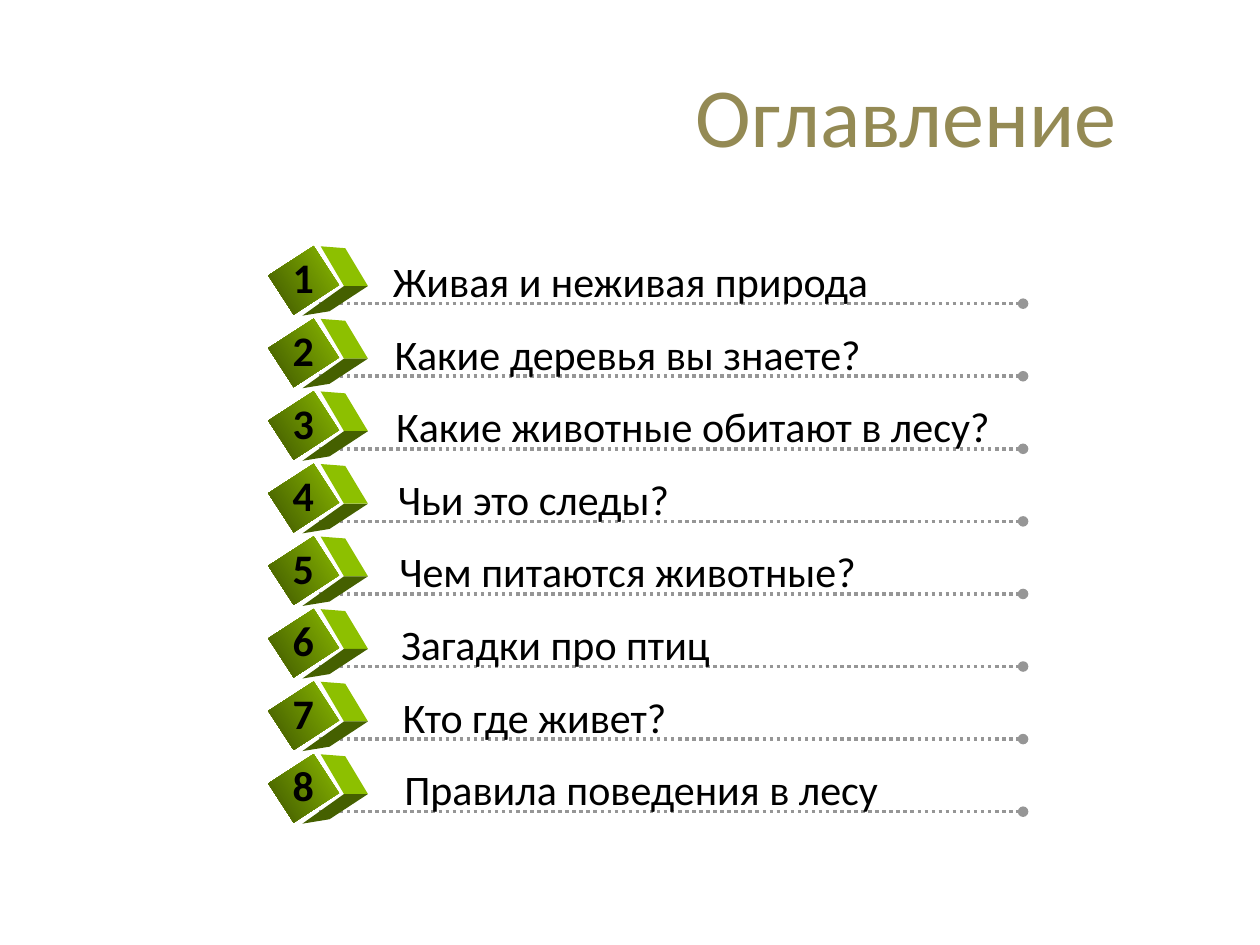
import pptx
import pptx.dml.color
import pptx.enum.dml
import pptx.enum.shapes
import pptx.enum.text
import pptx.oxml
import pptx.oxml.ns
import pptx.util

COLUMNS, ROWS = 100, 75
TOPICS = [
    "Живая и неживая природа",
    "Какие деревья вы знаете?",
    "Какие животные обитают в лесу?",
    "Чьи это следы?",
    "Чем питаются животные?",
    "Загадки про птиц",
    "Кто где живет?",
    "Правила поведения в лесу",
]


def colour(code):
    return pptx.dml.color.RGBColor.from_string(code)


def add_xml(parent, tag, **attributes):
    element = pptx.oxml.parse_xml(f"<a:{tag} {pptx.oxml.ns.nsdecls('a')}/>")
    for name, value in attributes.items():
        element.set(name, value)
    parent.append(element)


class Contents:
    """Holds the style, the slide and the group being filled."""

    font = "Calibri"
    ink, heading, rule_grey = "000000", "948A54", "969696"
    front_light, front_dark = "8ABA00", "3F5600"
    side_green, base_green = "8DC000", "456000"

    def __init__(self, deck):
        self.page = deck.slides.add_slide(deck.slide_layouts[6])
        self.shapes = self.page.shapes
        self.column = deck.slide_width / COLUMNS
        self.row = deck.slide_height / ROWS

    def x(self, columns):
        return round(columns * self.column)

    def y(self, rows):
        return round(rows * self.row)

    def start_group(self):
        self.shapes = self.page.shapes.add_group_shape().shapes

    def text(self, words, left, top, width, height, size=24, code=ink,
             bold=False, align=pptx.enum.text.PP_ALIGN.LEFT,
             anchor=pptx.enum.text.MSO_ANCHOR.TOP):
        box = self.shapes.add_textbox(
            self.x(left), self.y(top), self.x(width), self.y(height))
        frame = box.text_frame
        frame.word_wrap = True
        frame.vertical_anchor = anchor
        para = frame.paragraphs[0]
        para.alignment = align
        span = para.add_run()
        span.text = words
        span.font.name = self.font
        span.font.size = pptx.util.Pt(size)
        span.font.bold = bold
        span.font.color.rgb = colour(code)

    def dotted_rule(self, left, right, level):
        rule = self.shapes.add_connector(
            pptx.enum.shapes.MSO_CONNECTOR.STRAIGHT,
            self.x(left), self.y(level), self.x(right), self.y(level))
        rule.line.color.rgb = colour(self.rule_grey)
        rule.line.width = pptx.util.Pt(2)
        rule.line.dash_style = pptx.enum.dml.MSO_LINE.ROUND_DOT
        add_xml(rule.line._get_or_add_ln(), "tailEnd", type="oval")
        add_xml(rule._element.spPr, "effectLst")

    def face(self, points, code):
        corners = [(self.x(across), self.y(down)) for across, down in points]
        builder = self.shapes.build_freeform(*corners[0])
        builder.add_line_segments(corners[1:])
        shape = builder.convert_to_shape()
        shape.shadow.inherit = False
        shape.fill.solid()
        shape.fill.fore_color.rgb = colour(code)
        shape.line.fill.background()

    def cube(self, left, top):
        # Side and base faces, seen behind the tilted front
        side = [(3.2, -0.55), (5.15, -0.4), (6.95, 2.6), (5.05, 2.6)]
        base = [(5.05, 2.6), (6.95, 2.6), (3.9, 4.6), (1.75, 4.95)]
        for outline, code in ((side, self.side_green), (base, self.base_green)):
            self.face([(left + dx, top + dy) for dx, dy in outline], code)
        front = self.shapes.add_shape(
            pptx.enum.shapes.MSO_SHAPE.RECTANGLE,
            self.x(left), self.y(top), self.x(3.7), self.y(4.3))
        front.rotation = 57
        front.shadow.inherit = False
        front.line.fill.background()
        front.fill.gradient()
        front.fill.gradient_angle = 270
        for stop, code in zip(front.fill.gradient_stops,
                              (self.front_light, self.front_dark)):
            stop.color.rgb = colour(code)

    def entry(self, index, topic):
        level = 24.1 + 5.76 * index
        self.start_group()
        self.dotted_rule(25.3, 81.2, level)
        self.cube(22.25, level - 4)
        self.text(topic, 30.2 + 0.13 * index, level - 4.3, 50, 5)
        self.text(str(index + 1), 22.25, level - 4.6, 4.3, 5, bold=True)


def main():
    deck = pptx.Presentation()
    deck.slide_width = pptx.util.Inches(10)
    deck.slide_height = pptx.util.Inches(7.5)
    contents = Contents(deck)

    # Title
    contents.text("Оглавление", 42.2, 3.6, 47.4, 10.9, size=48,
                  code=contents.heading,
                  align=pptx.enum.text.PP_ALIGN.RIGHT,
                  anchor=pptx.enum.text.MSO_ANCHOR.MIDDLE)

    # Numbered topics
    for index, topic in enumerate(TOPICS):
        contents.entry(index, topic)

    deck.save("out.pptx")


if __name__ == "__main__":
    main()
